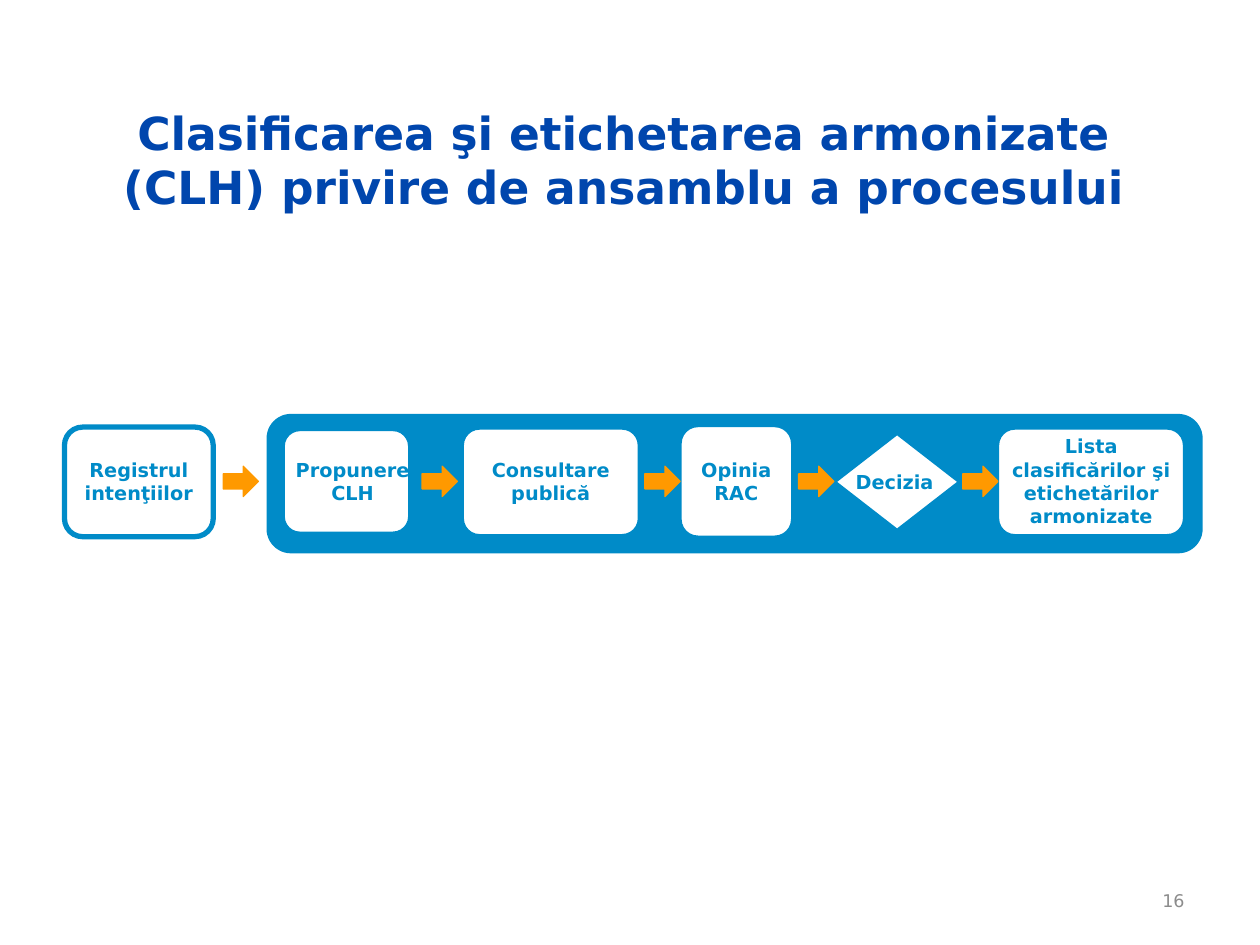
"""Build the overview slide of the harmonised classification process."""
from dataclasses import dataclass

from pptx import Presentation
from pptx import util as u
from pptx.dml.color import RGBColor
from pptx.enum import shapes, text

KIND = shapes.MSO_SHAPE
ALIGN = text.PP_ALIGN
ANCHOR = text.MSO_ANCHOR


@dataclass(frozen=True)
class Theme:
    font: str = "DejaVu Sans"
    title: str = "0046AD"
    process: str = "008BC8"
    box: str = "FFFFFF"
    arrow: str = "FF9900"
    number: str = "8C8C8C"
    title_size: int = 26
    label_size: int = 11
    number_size: int = 10


class SlideBuilder:
    def __init__(self, slide, theme):
        self.slide = slide
        self.theme = theme

    def shape(self, kind, place, fill, line, weight):
        figure = self.slide.shapes.add_shape(kind, *map(u.Cm, place))
        figure.shadow.inherit = False
        figure.fill.solid()
        figure.fill.fore_color.rgb = RGBColor.from_string(fill)
        figure.line.color.rgb = RGBColor.from_string(line)
        figure.line.width = u.Pt(weight)

    def words(self, place, lines, size, color, bold=True,
              align=ALIGN.CENTER, anchor=ANCHOR.MIDDLE):
        frame = self.slide.shapes.add_textbox(*map(u.Cm, place)).text_frame
        frame.word_wrap = True
        frame.vertical_anchor = anchor
        frame.text = lines
        for paragraph in frame.paragraphs:
            paragraph.alignment = align
            paragraph.font.name = self.theme.font
            paragraph.font.size = u.Pt(size)
            paragraph.font.bold = bold
            paragraph.font.color.rgb = RGBColor.from_string(color)

    def title(self, place, lines):
        self.words(place, lines, self.theme.title_size, self.theme.title)

    def page_number(self, place, number):
        self.words(place, number, self.theme.number_size, self.theme.number,
                   bold=False, align=ALIGN.RIGHT)

    def panel(self, place):
        self.shape(KIND.FLOWCHART_ALTERNATE_PROCESS, place,
                   self.theme.process, self.theme.process, 2)

    def step(self, kind, place, label, label_place):
        self.shape(kind, place, self.theme.box, self.theme.process, 3)
        self.words(label_place, label, self.theme.label_size,
                   self.theme.process, anchor=ANCHOR.TOP)

    def arrow(self, left):
        self.shape(KIND.RIGHT_ARROW, (left, 9.4, 0.71, 0.61),
                   self.theme.arrow, self.theme.arrow, 0.75)


STEPS = [
    (KIND.ROUNDED_RECTANGLE, (1.3, 8.61, 3, 2.21),
     "Registrul intenţiilor", (1.3, 9.12, 3, 1.19)),
    (KIND.ROUNDED_RECTANGLE, (5.69, 8.64, 2.59, 2.13),
     "Propunere CLH", (5.69, 9.12, 2.84, 1.19)),
    (KIND.FLOWCHART_ALTERNATE_PROCESS, (9.3, 8.61, 3.61, 2.21),
     "Consultare publică", (9.3, 9.12, 3.61, 1.19)),
    (KIND.FLOWCHART_ALTERNATE_PROCESS, (13.69, 8.56, 2.31, 2.29),
     "Opinia RAC", (13.69, 9.12, 2.31, 1.19)),
    (KIND.DIAMOND, (16.79, 8.71, 2.59, 2.01),
     "Decizia", (16.79, 9.35, 2.49, 0.74)),
    (KIND.ROUNDED_RECTANGLE, (20.09, 8.61, 3.81, 2.21),
     "Lista clasificărilor şi etichetărilor armonizate", (19.89, 8.64, 4.22, 2.62)),
]
ARROW_LEFTS = [4.5, 8.51, 13, 16.1, 19.41]


def main():
    deck = Presentation()
    deck.slide_width, deck.slide_height = u.Cm(25.4), u.Cm(19.05)
    builder = SlideBuilder(deck.slides.add_slide(deck.slide_layouts[6]), Theme())
    builder.title((1.09, 1.12, 22.99, 4.19),
                  "Clasificarea şi etichetarea armonizate\n"
                  "(CLH) privire de ansamblu a procesului")
    builder.page_number((18.21, 17.65, 5.92, 1.02), "16")
    builder.panel((5.41, 8.38, 18.8, 2.74))
    for step in STEPS:
        builder.step(*step)
    for left in ARROW_LEFTS:
        builder.arrow(left)
    deck.save("out.pptx")


if __name__ == "__main__":
    main()
